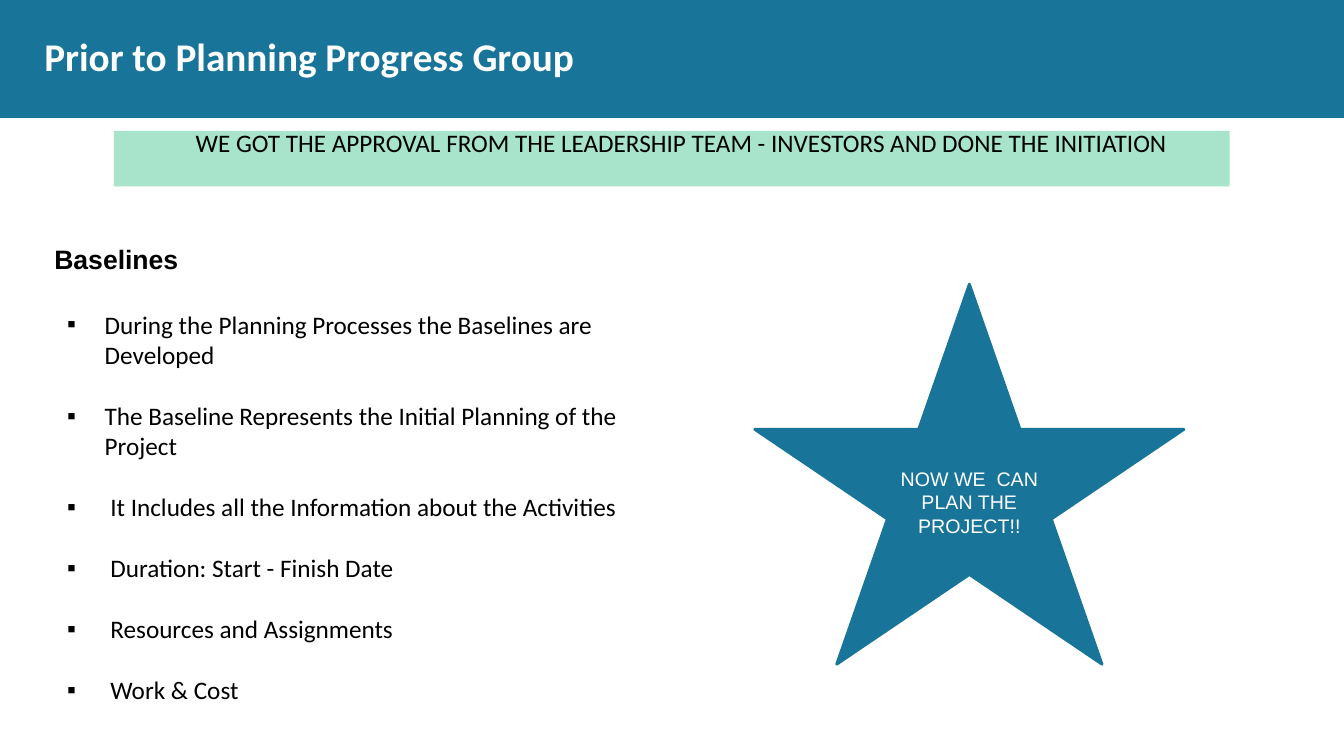
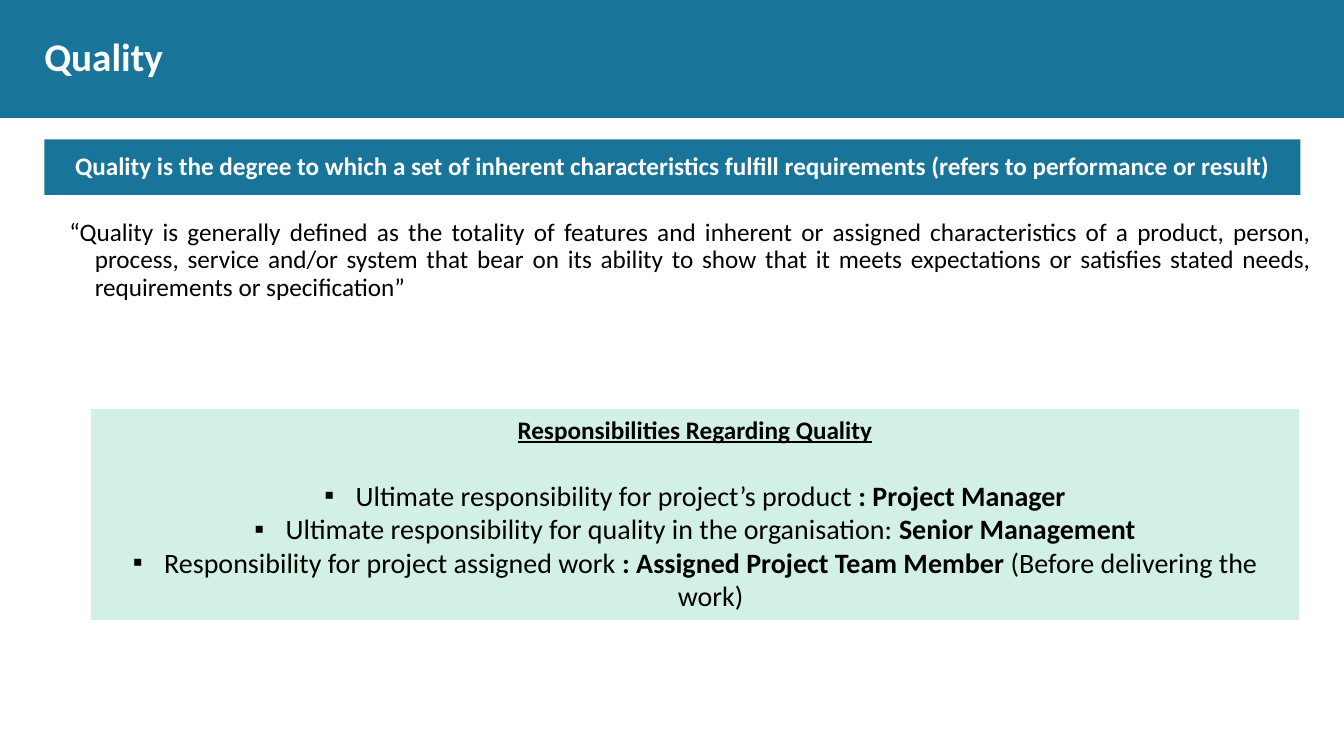
from lxml import etree
from pptx import Presentation
from pptx import util as u
from pptx.dml.color import RGBColor
from pptx.enum import shapes, text
from pptx.oxml import ns

BLUE = RGBColor(0x18, 0x74, 0x98)
GREEN = RGBColor(0xA7, 0xE4, 0xCB)
PALE_GREEN = RGBColor(0xD2, 0xF1, 0xE4)
BLACK = RGBColor(0, 0, 0)
WHITE = RGBColor(0xFF, 0xFF, 0xFF)

SLIDE_WIDTH, SLIDE_HEIGHT = 33.87, 19.05
MARGIN = 1.12
CONTENT_WIDTH = 31.65
PADDING = (0.25, 0.13)
HANGING = (1.27, -0.64)

BODY = {"name": "Calibri", "size": u.Pt(18), "bold": False}
STRONG = {**BODY, "bold": True}
TITLE = {**STRONG, "size": u.Pt(28)}
LARGE = {**BODY, "size": u.Pt(20)}
LARGE_STRONG = {**LARGE, "bold": True}
UNDERLINED = {**STRONG, "underline": True}
LIST_HEADING = {"name": "Arial", "size": u.Pt(19), "bold": True}
STAR_TEXT = {"name": "Arial", "size": u.Pt(14)}

LEFT = {"alignment": text.PP_ALIGN.LEFT}
CENTERED = {"alignment": text.PP_ALIGN.CENTER}
JUSTIFIED = {"alignment": text.PP_ALIGN.JUSTIFY, "line_spacing": 0.9}

BASELINES = (
    "During the Planning Processes the Baselines are Developed",
    "The Baseline Represents the Initial Planning of the Project",
    " It Includes all the Information about the Activities",
    " Duration: Start - Finish Date",
    " Resources and Assignments",
    " Work & Cost",
)
RESPONSIBILITIES = (
    (("Ultimate responsibility for project’s product ", LARGE),
     (": Project Manager", LARGE_STRONG)),
    (("Ultimate responsibility for quality in the organisation: ", LARGE),
     ("Senior Management", LARGE_STRONG)),
    (("Responsibility for project assigned work ", LARGE),
     (": Assigned Project Team Member", LARGE_STRONG),
     (" (Before delivering the work)", LARGE)),
)
QUOTE = (
    "“Quality is generally defined as the totality of features and inherent or "
    "assigned characteristics of a product, person, process, service and/or system "
    "that bear on its ability to show that it meets expectations or satisfies "
    "stated needs, requirements or specification”"
)


def apply_format(target, values):
    """Set each attribute named in the format values."""
    for name, value in values.items():
        setattr(target, name, value)


def set_indent(paragraph, left, first_line):
    """Set the left margin and first-line indent in centimetres."""
    properties = paragraph._p.get_or_add_pPr()
    properties.set("marL", str(u.Cm(left)))
    properties.set("indent", str(u.Cm(first_line)))


def add_bullet(paragraph):
    """Give a paragraph a small black square bullet."""
    properties = paragraph._p.get_or_add_pPr()
    color = etree.SubElement(properties, ns.qn("a:buClr"))
    etree.SubElement(color, ns.qn("a:srgbClr"), val=str(BLACK))
    etree.SubElement(properties, ns.qn("a:buFont"), typeface="Arial")
    etree.SubElement(properties, ns.qn("a:buChar"), char="▪")


def prepare_frame(shape, padding=(0, 0), anchor=text.MSO_ANCHOR.TOP):
    """Set wrapping, insets and anchor, and return the text frame."""
    frame = shape.text_frame
    horizontal, vertical = map(u.Cm, padding)
    apply_format(frame, {
        "word_wrap": True,
        "vertical_anchor": anchor,
        "margin_left": horizontal,
        "margin_right": horizontal,
        "margin_top": vertical,
        "margin_bottom": vertical,
    })
    return frame


def write_paragraph(paragraph, runs, layout, color=BLACK, indent=None, bullet=False):
    """Fill a paragraph with formatted runs."""
    apply_format(paragraph, layout)
    if indent:
        set_indent(paragraph, *indent)
    if bullet:
        add_bullet(paragraph)
    for wording, font_format in runs:
        run = paragraph.add_run()
        run.text = wording
        apply_format(run.font, font_format)
        run.font.color.rgb = color


def add_filled_shape(slide, kind, box, color):
    """Add a flat preset shape in one colour."""
    shape = slide.shapes.add_shape(kind, *map(u.Cm, box))
    shape.shadow.inherit = False
    shape.fill.solid()
    shape.fill.fore_color.rgb = color
    shape.line.fill.background()
    return shape


def add_rectangle(slide, box, color):
    """Add a filled rectangle."""
    return add_filled_shape(slide, shapes.MSO_SHAPE.RECTANGLE, box, color)


def add_text_box(slide, box):
    """Add an empty text box."""
    return slide.shapes.add_textbox(*map(u.Cm, box))


def add_titled_slide(presentation, title):
    """Add a slide with the blue title band."""
    slide = presentation.slides.add_slide(presentation.slide_layouts[6])
    add_rectangle(slide, (0, 0, SLIDE_WIDTH, 2.97), BLUE)
    title_box = add_text_box(slide, (MARGIN, 0.48, CONTENT_WIDTH, 1.88))
    frame = prepare_frame(title_box, anchor=text.MSO_ANCHOR.MIDDLE)
    write_paragraph(frame.paragraphs[0], [(title, TITLE)], LEFT, WHITE)
    return slide


def add_banner(slide, box, fill, wording, font_format, layout, color, anchor):
    """Add a filled strip with one line of text."""
    frame = prepare_frame(add_rectangle(slide, box, fill), anchor=anchor)
    write_paragraph(frame.paragraphs[0], [(wording, font_format)], layout, color, HANGING)


def add_bulleted_list(shape, heading, heading_layout, items, item_layout, indent):
    """Write a heading followed by bulleted items."""
    frame = prepare_frame(shape, PADDING)
    write_paragraph(frame.paragraphs[0], [heading], heading_layout)
    for runs in items:
        write_paragraph(frame.add_paragraph(), runs, item_layout, indent=indent, bullet=True)


def add_star(slide, box, wording):
    """Add a blue five-pointed star with centred text."""
    star = add_filled_shape(slide, shapes.MSO_SHAPE.STAR_5_POINT, box, BLUE)
    star.line.color.rgb = BLUE
    star.line.width = u.Pt(2)
    frame = prepare_frame(star, PADDING, text.MSO_ANCHOR.MIDDLE)
    write_paragraph(frame.paragraphs[0], [(wording, STAR_TEXT)], CENTERED, WHITE)


def build_planning_slide(presentation):
    """Build the slide on the baselines."""
    slide = add_titled_slide(presentation, "Prior to Planning Progress Group")
    add_banner(
        slide, (2.87, 3.3, 28.12, 1.4), GREEN,
        "WE GOT THE APPROVAL FROM THE LEADERSHIP TEAM - INVESTORS AND DONE THE INITIATION ",
        BODY, {**CENTERED, "line_spacing": 0.9}, BLACK, text.MSO_ANCHOR.TOP,
    )
    add_star(slide, (19.02, 7.16, 10.82, 9.58), "NOW WE  CAN PLAN THE PROJECT!!")
    add_bulleted_list(
        add_text_box(slide, (MARGIN, 5.99, 16.08, 11.94)),
        ("Baselines", LIST_HEADING), {**LEFT, "space_after": u.Pt(2.4)},
        [[(item, BODY)] for item in BASELINES],
        {**LEFT, "space_before": u.Pt(22)}, (1.27, -0.95),
    )


def build_quality_slide(presentation):
    """Build the slide on quality and who answers for it."""
    slide = add_titled_slide(presentation, "Quality")
    add_banner(
        slide, (MARGIN, 3.51, CONTENT_WIDTH, 1.4), BLUE,
        " Quality is the degree to which a set of inherent characteristics fulfill "
        "requirements (refers to performance or result)",
        STRONG, JUSTIFIED, WHITE, text.MSO_ANCHOR.MIDDLE,
    )
    frame = prepare_frame(add_text_box(slide, (MARGIN, 5.54, 31.93, 3.2)))
    write_paragraph(frame.paragraphs[0], [(QUOTE, BODY)], JUSTIFIED, indent=HANGING)
    add_bulleted_list(
        add_rectangle(slide, (2.29, 10.31, 30.45, 5.31), PALE_GREEN),
        ("Responsibilities Regarding Quality", UNDERLINED),
        {**CENTERED, "space_after": u.Pt(24)},
        RESPONSIBILITIES, CENTERED, (0.79, -0.79),
    )


def main():
    """Build and save the presentation."""
    presentation = Presentation()
    presentation.slide_width = u.Cm(SLIDE_WIDTH)
    presentation.slide_height = u.Cm(SLIDE_HEIGHT)
    build_planning_slide(presentation)
    build_quality_slide(presentation)
    presentation.save("out.pptx")


if __name__ == "__main__":
    main()
